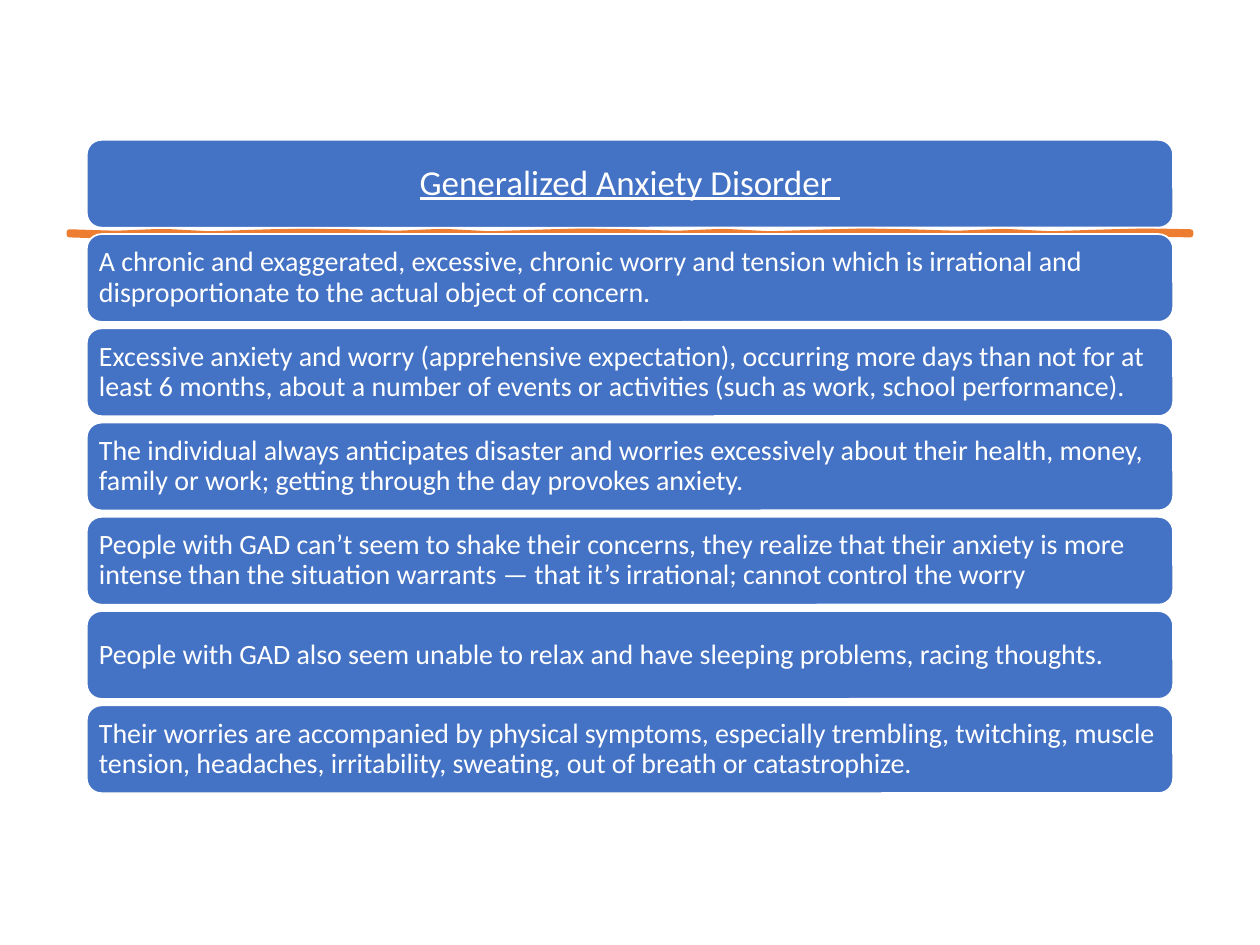
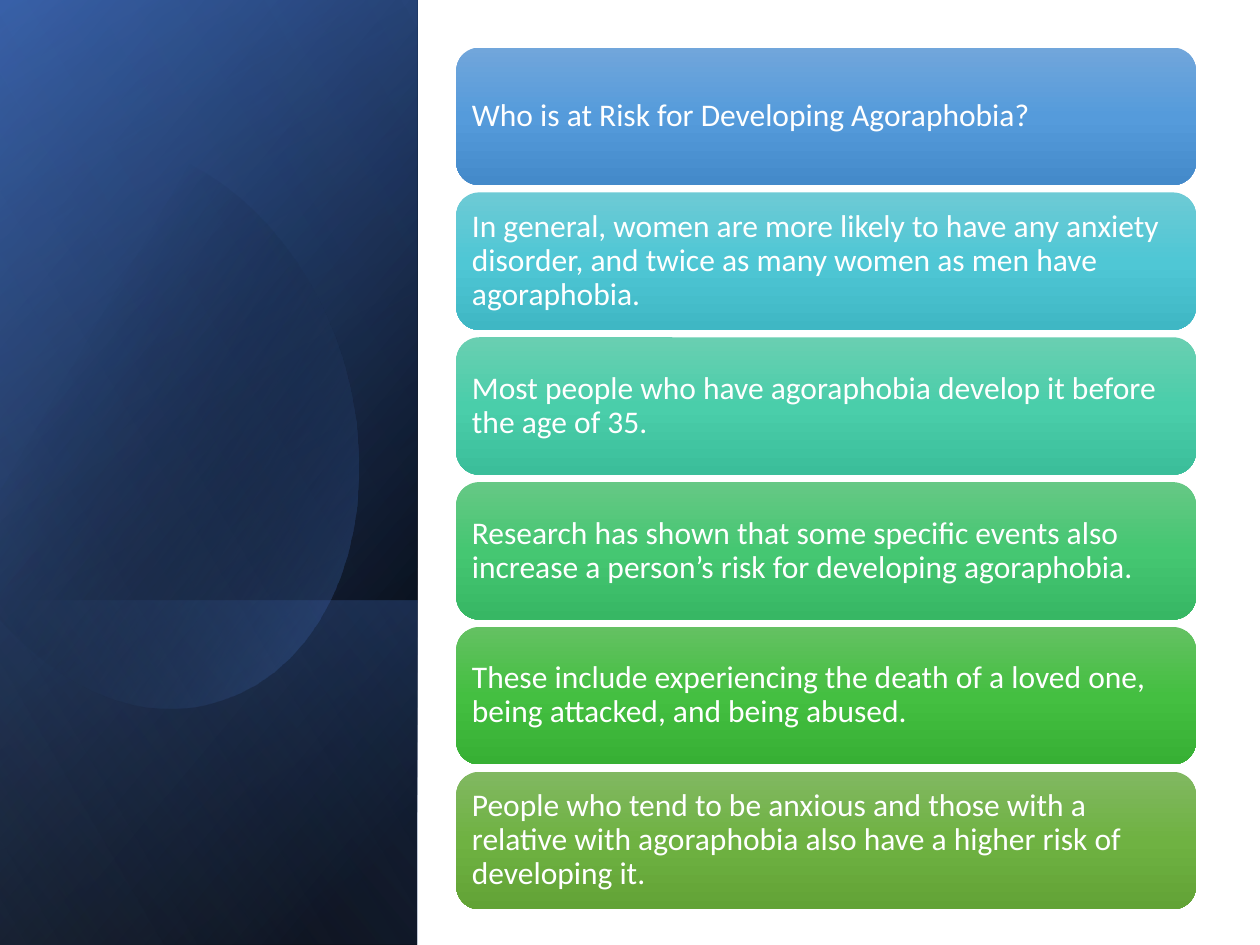
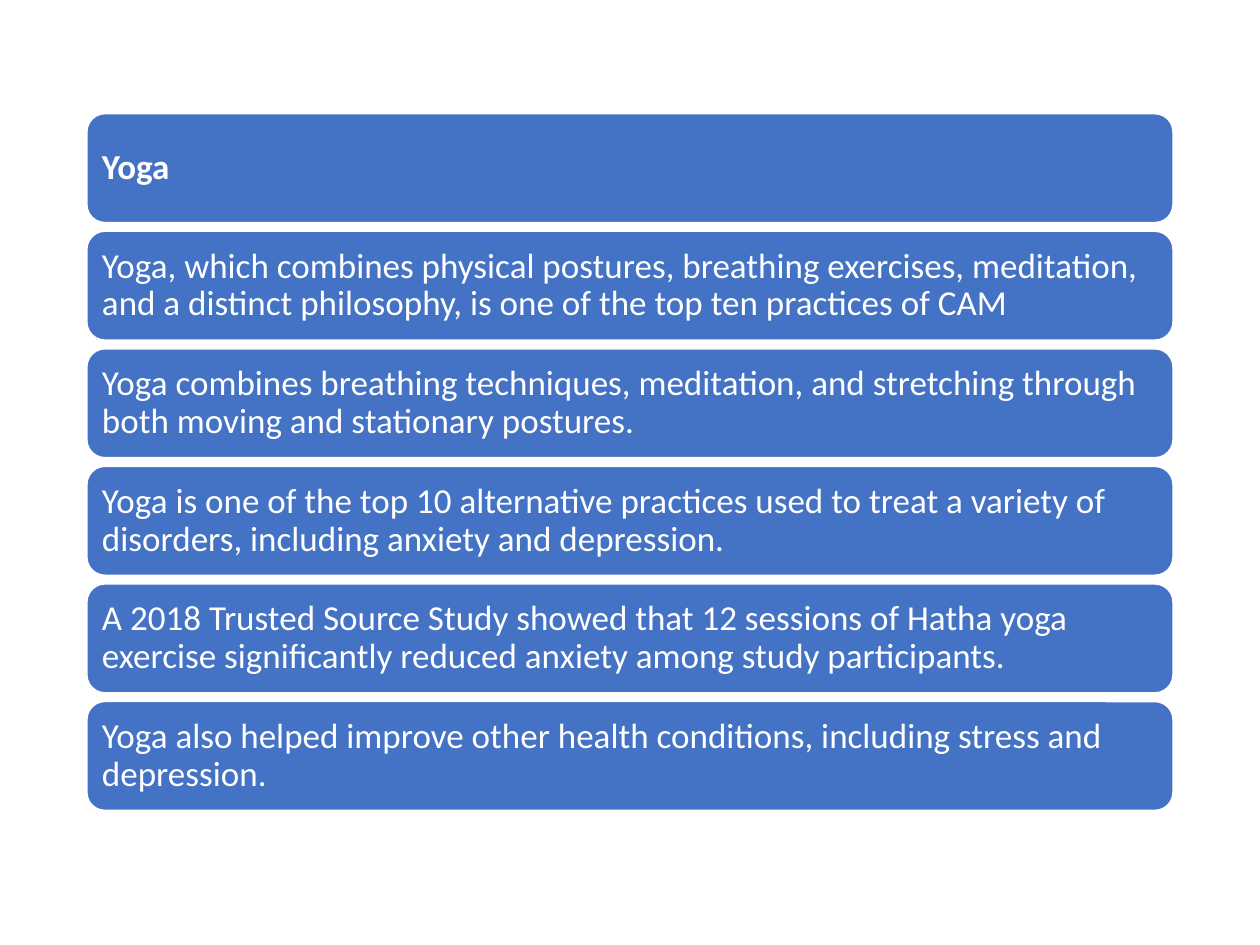
from dataclasses import dataclass

from pptx import Presentation
from pptx.dml.color import RGBColor
from pptx.enum.shapes import MSO_SHAPE as Preset
from pptx.enum.text import MSO_ANCHOR as Anchor, PP_ALIGN as Align
from pptx.oxml import parse_xml
from pptx.oxml.ns import nsdecls, qn
from pptx.util import Cm, Pt

FONT = "Calibri"
WHITE = RGBColor(0xFF, 0xFF, 0xFF)
BLACK = RGBColor(0x00, 0x00, 0x00)
BLUE = RGBColor(0x44, 0x72, 0xC4)
DEEP_BLUE = RGBColor(0x2F, 0x55, 0x97)
PALE_BLUE = RGBColor(0x8F, 0xAA, 0xDC)
ORANGE = RGBColor(0xED, 0x7D, 0x31)
BAR_SHADES = [
    [RGBColor.from_string(shade) for shade in shades.split()]
    for shades in (
        "71A6DB 559BDB 448ACA",
        "6DCAD5 4FC7D5 3FB7C4",
        "69CFB1 4ACEAA 3BBE9A",
        "66C885 45C772 37B764",
        "64C162 44BF41 37B034",
        "81B861 6FB242 62A336",
    )
]

SLIDE_WIDTH, SLIDE_HEIGHT = 25.4, 19.05
PANEL_WIDTH = 8.41

ANXIETY_LINES = [
    "Generalized Anxiety Disorder ",
    "A chronic and exaggerated, excessive, chronic worry and tension which is irrational and disproportionate to the actual object of concern.",
    "Excessive anxiety and worry (apprehensive expectation), occurring more days than not for at least 6 months, about a number of events or activities (such as work, school performance).",
    "The individual always anticipates disaster and worries excessively about their health, money, family or work; getting through the day provokes anxiety.",
    "People with GAD can’t seem to shake their concerns, they realize that their anxiety is more intense than the situation warrants — that it’s irrational; cannot control the worry",
    "People with GAD also seem unable to relax and have sleeping problems, racing thoughts.",
    "Their worries are accompanied by physical symptoms, especially trembling, twitching, muscle tension, headaches, irritability, sweating, out of breath or catastrophize.",
]
AGORAPHOBIA_LINES = [
    "Who is at Risk for Developing Agoraphobia?",
    "In general, women are more likely to have any anxiety disorder, and twice as many women as men have agoraphobia.",
    "Most people who have agoraphobia develop it before the age of 35.",
    "Research has shown that some specific events also increase a person’s risk for developing agoraphobia.",
    "These include experiencing the death of a loved one, being attacked, and being abused.",
    "People who tend to be anxious and those with a relative with agoraphobia also have a higher risk of developing it.",
]
YOGA_LINES = [
    "Yoga",
    "Yoga, which combines physical postures, breathing exercises, meditation, and a distinct philosophy, is one of the top ten practices of CAM",
    "Yoga combines breathing techniques, meditation, and stretching through both moving and stationary postures.",
    "Yoga is one of the top 10 alternative practices used to treat a variety of disorders, including anxiety and depression.",
    "A 2018 Trusted Source Study showed that 12 sessions of Hatha yoga exercise significantly reduced anxiety among study participants.",
    "Yoga also helped improve other health conditions, including stress and depression.",
]


@dataclass
class Stack:
    left: float
    top: float
    width: float
    bar_height: float
    pitch: float
    font_size: int


def add_page(deck):
    return deck.slides.add_slide(deck.slide_layouts[6])


def fill_solid(shape, colour):
    shape.fill.solid()
    shape.fill.fore_color.rgb = colour


def fill_gradient(shape, stops, angle):
    marks = "".join(
        f'<a:gs pos="{position * 1000}"><a:srgbClr val="{colour}">'
        f'<a:alpha val="{opacity * 1000}"/></a:srgbClr></a:gs>'
        for position, colour, opacity in stops
    )
    gradient = parse_xml(
        f'<a:gradFill {nsdecls("a")} rotWithShape="1"><a:gsLst>{marks}</a:gsLst>'
        f'<a:lin ang="{angle * 60000}" scaled="0"/></a:gradFill>'
    )
    shape.fill.background()
    properties = shape._element.spPr
    properties.replace(properties.find(qn("a:noFill")), gradient)
    shape.line.fill.background()


def write_line(bar, text, size):
    frame = bar.text_frame
    frame.word_wrap = True
    frame.vertical_anchor = Anchor.MIDDLE
    inset = Cm(size * 0.01)
    frame.margin_left = frame.margin_right = inset
    frame.margin_top = frame.margin_bottom = inset
    para = frame.paragraphs[0]
    para.alignment = Align.LEFT
    para.line_spacing = 0.9
    span = para.add_run()
    span.text = text
    span.font.name = FONT
    span.font.size = Pt(size)
    span.font.color.rgb = WHITE


def add_bars(page, stack, lines):
    bars = []
    for index, text in enumerate(lines):
        bar = page.shapes.add_shape(
            Preset.ROUNDED_RECTANGLE,
            Cm(stack.left), Cm(stack.top + index * stack.pitch),
            Cm(stack.width), Cm(stack.bar_height),
        )
        bar.shadow.inherit = False
        fill_solid(bar, BLUE)
        bar.line.color.rgb = WHITE
        bar.line.width = Pt(1)
        write_line(bar, text, stack.font_size)
        bars.append(bar)
    return bars


def add_outline(page, points):
    corners = [(Cm(x), Cm(y)) for x, y in points]
    builder = page.shapes.build_freeform(*corners[0], scale=1.0)
    builder.add_line_segments(corners[1:], close=True)
    outline = builder.convert_to_shape()
    outline.shadow.inherit = False
    return outline


def add_brush_stroke(page):
    left, right, middle, steps = 1.4, 24.0, 4.68, 24
    waves = [0, 0.03, -0.01, 0.04, 0.01, -0.02]
    edge = [
        (left + (right - left) * step / steps, middle + waves[step % len(waves)])
        for step in range(steps + 1)
    ]
    lower = [(x, y + 0.05) for x, y in reversed(edge)]
    stroke = add_outline(page, edge + lower)
    fill_solid(stroke, ORANGE)
    stroke.line.color.rgb = ORANGE
    stroke.line.width = Pt(3.25)


def add_panel(page, top, height, stops, angle):
    offset = (height - PANEL_WIDTH) / 2
    panel = page.shapes.add_shape(
        Preset.RECTANGLE, Cm(-offset), Cm(top + offset), Cm(height), Cm(PANEL_WIDTH)
    )
    panel.rotation = 90
    panel._element.spPr.xfrm.set("flipH", "1")
    panel.shadow.inherit = False
    fill_gradient(panel, stops, angle)


def curve(start, first, second, end, steps=16):
    points = []
    for step in range(1, steps + 1):
        t = step / steps
        weights = ((1 - t) ** 3, 3 * t * (1 - t) ** 2, 3 * t * t * (1 - t), t ** 3)
        points.append(tuple(
            sum(weight * value for weight, value in zip(weights, values))
            for values in zip(start, first, second, end)
        ))
    return points


def add_glow(page):
    crest, shoulder, base = (2.44, 2.9), (6.93, 7.37), (4.34, 14.15)
    points = [
        crest,
        *curve(crest, (4.34, 3.1), (6.2, 4.88), shoulder),
        *curve(shoulder, (7.8, 10.46), (6.65, 13.49), base),
        *curve(base, (2.9, 14.58), (1.35, 13.97), (0, 12.5)),
        (0, 3.6),
        *curve((0, 3.6), (0.6, 3.1), (1.6, 2.8), crest),
    ]
    glow = add_outline(page, points)
    fill_gradient(glow, [(29, BLACK, 0), (100, BLUE, 43)], 30)


def add_side_art(page):
    add_panel(page, 0, SLIDE_HEIGHT, [(8, BLACK, 100), (100, DEEP_BLUE, 100)], 50)
    add_panel(page, 0, SLIDE_HEIGHT, [(0, BLACK, 0), (99, BLUE, 46)], 30)
    add_panel(page, 12.1, 6.95, [(2, BLUE, 29), (100, BLACK, 30)], 130)
    add_glow(page)
    add_panel(page, 0, SLIDE_HEIGHT, [(0, BLACK, 0), (99, PALE_BLUE, 11)], 120)


def add_anxiety_page(deck):
    page = add_page(deck)
    add_brush_stroke(page)
    bars = add_bars(page, Stack(1.75, 2.82, 21.9, 1.77, 1.9, 16), ANXIETY_LINES)
    heading = bars[0].text_frame.paragraphs[0]
    heading.alignment = Align.CENTER
    heading.runs[0].font.size = Pt(20)
    heading.runs[0].font.underline = True


def add_agoraphobia_page(deck):
    page = add_page(deck)
    add_side_art(page)
    bars = add_bars(page, Stack(9.2, 0.96, 14.91, 2.77, 2.92, 18), AGORAPHOBIA_LINES)
    for bar, shades in zip(bars, BAR_SHADES):
        stops = [(50 * index, shade, 100) for index, shade in enumerate(shades)]
        fill_gradient(bar, stops, 90)


def add_yoga_page(deck):
    page = add_page(deck)
    bars = add_bars(page, Stack(1.75, 2.29, 21.9, 2.2, 2.37, 20), YOGA_LINES)
    bars[0].text_frame.paragraphs[0].runs[0].font.bold = True


def main():
    deck = Presentation()
    deck.slide_width = Cm(SLIDE_WIDTH)
    deck.slide_height = Cm(SLIDE_HEIGHT)
    add_anxiety_page(deck)
    add_agoraphobia_page(deck)
    add_yoga_page(deck)
    deck.save("out.pptx")


if __name__ == "__main__":
    main()
